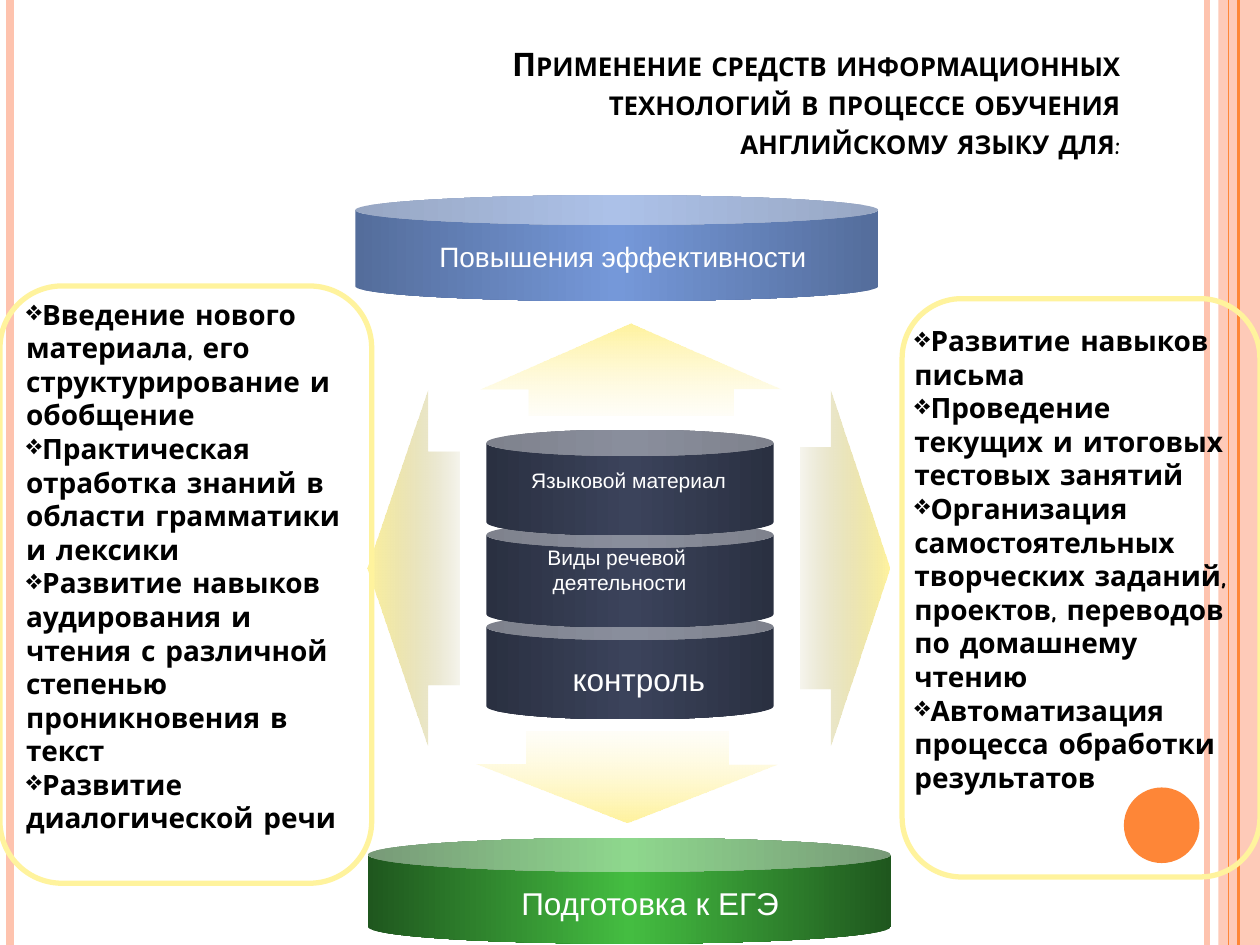
from lxml.etree import SubElement
from pptx import Presentation
from pptx.dml.color import RGBColor
from pptx.enum.shapes import MSO_CONNECTOR, MSO_SHAPE as SHAPE
from pptx.enum.text import MSO_ANCHOR, MSO_AUTO_SIZE, PP_ALIGN
from pptx.oxml.ns import qn
from pptx.util import Inches, Pt

THEME = {
    "orange": "FE8637", "peach": "FEC3AE", "yellow": "FFF39D",
    "cream": "FFF7C8", "olive": "B6AE70", "black": "000000", "white": "FFFFFF",
    "navy": ("2A3041", "3B435B"), "blue": ("546D9B", "7598D9"),
    "green": ("1F571E", "44BD41"),
    "heading_font": "Comic Neue", "label_font": "Arial",
    "title_size": 18.5, "list_size": 16, "small_label": 12,
    "medium_label": 16, "large_label": 18,
}


def color(name):
    return RGBColor.from_string(THEME[name])


def add_gradient_shape(kind, box, stops, angle=0, adjustments=()):
    """Add a borderless shape; stops are (position %, hex colour, opacity %)."""
    shape = slide.shapes.add_shape(kind, *map(Inches, box))
    shape.shadow.inherit = False
    shape.line.fill.background()
    for index, value in enumerate(adjustments):
        shape.adjustments[index] = value
    shape.fill.background()
    properties = shape._element.spPr
    no_fill = properties.find(qn("a:noFill"))
    gradient = SubElement(properties, qn("a:gradFill"), rotWithShape="1")
    properties.replace(no_fill, gradient)
    stop_list = SubElement(gradient, qn("a:gsLst"))
    for position, rgb, opacity in stops:
        stop = SubElement(stop_list, qn("a:gs"), pos=str(position * 1000))
        stop_color = SubElement(stop, qn("a:srgbClr"), val=rgb)
        if opacity < 100:
            SubElement(stop_color, qn("a:alpha"), val=str(opacity * 1000))
    SubElement(gradient, qn("a:lin"), ang=str(angle * 60000), scaled="0")


def add_text(box, lines, size, font, color_name, bold=False, bullet=None):
    """Add a text box: centred lines, or a left-aligned list with a bullet."""
    frame = slide.shapes.add_textbox(*map(Inches, box)).text_frame
    frame.word_wrap = True
    frame.text = "\n".join(lines)
    for paragraph in frame.paragraphs:
        paragraph.alignment = PP_ALIGN.LEFT if bullet else PP_ALIGN.CENTER
        paragraph.font.size = Pt(THEME[size])
        paragraph.font.name = THEME[font]
        paragraph.font.bold = bold
        paragraph.font.color.rgb = color(color_name)
        if bullet:
            properties = paragraph._p.get_or_add_pPr()
            mark = properties.makeelement(qn("a:buChar"), {"char": bullet})
            properties.find(qn("a:defRPr")).addprevious(mark)
        for run in paragraph.runs:
            run.font.size = Pt(THEME[size])
            run.font.name = THEME[font]
            run.font.bold = bold
            run.font.color.rgb = color(color_name)


prs = Presentation()
prs.slide_width, prs.slide_height = Inches(10), Inches(7.5)
slide = prs.slides.add_slide(prs.slide_layouts[5])

# Side stripes and the circle
band = slide.shapes.add_shape(
    SHAPE.RECTANGLE, Inches(9.67), 0, Inches(0.33), Inches(7.5))
circle = slide.shapes.add_shape(
    SHAPE.OVAL, Inches(8.92), Inches(6.25), Inches(0.6), Inches(0.6))
for decoration, color_name in ((band, "peach"), (circle, "orange")):
    decoration.shadow.inherit = False
    decoration.fill.solid()
    decoration.fill.fore_color.rgb = color(color_name)
    decoration.line.fill.background()
band_color = next(band._element.spPr.iter(qn("a:srgbClr")))
SubElement(band_color, qn("a:alpha"), val="87000")

for x, color_name, width in ((0.08, "peach", 4.5), (9.58, "peach", 3),
                             (9.75, "orange", 0.75), (9.83, "orange", 1.5)):
    stripe = slide.shapes.add_connector(
        MSO_CONNECTOR.STRAIGHT, Inches(x), 0, Inches(x), Inches(7.5))
    stripe.line.color.rgb = color(color_name)
    stripe.line.width = Pt(width)
    SubElement(stripe._element.spPr, qn("a:effectLst"))

# Title
title = slide.shapes.title
title.left, title.top = Inches(3.2), Inches(0.28)
title.width, title.height = Inches(5.79), Inches(1.05)
heading = title.text_frame
heading.text = ("Применение средств информационных технологий "
                "в процессе обучения английскому языку для:")
heading.word_wrap = True
heading.auto_size = MSO_AUTO_SIZE.NONE
heading.vertical_anchor = MSO_ANCHOR.BOTTOM
heading.paragraphs[0].alignment = PP_ALIGN.RIGHT
heading_run = heading.paragraphs[0].runs[0]
heading_run.font.size = Pt(THEME["title_size"])
heading_run.font.name = THEME["heading_font"]
heading_run.font.bold = True
heading_run.font.color.rgb = color("black")
heading_run._r.get_or_add_rPr().set("cap", "small")

# Cylinders: the central stack from bottom to top, then the two wide ones
cylinders = [((3.86, 4.87 - 0.73 * level, 2.28, 0.84), "navy", 0.25)
             for level in range(3)]
cylinders += [((2.82, 1.55, 4.15, 0.84), "blue", 0.28),
              ((2.92, 6.65, 4.15, 0.84), "green", 0.32)]
for box, palette, rim in cylinders:
    edge, middle = THEME[palette]
    add_gradient_shape(
        SHAPE.CAN, box,
        [(0, edge, 100), (50, middle, 100), (100, edge, 100)],
        adjustments=[rim])

# Arrows fade from the tip to the tail
arrows = [
    (SHAPE.LEFT_ARROW, (2.92, 3.1, 0.73, 2.82), "olive", 0, True, (0.66, 0.65)),
    (SHAPE.RIGHT_ARROW, (6.35, 3.1, 0.71, 2.82), "olive", 0, False, (0.68, 0.66)),
    (SHAPE.UP_ARROW, (3.81, 2.57, 2.39, 0.73), "cream", 90, True, (0.68, 0.71)),
    (SHAPE.DOWN_ARROW, (3.78, 5.81, 2.39, 0.72), "cream", 90, False, (0.67, 0.64)),
]
for kind, box, tail, angle, tip_first, adjustments in arrows:
    ends = [(THEME["yellow"], 100), (THEME[tail], 12)]
    if not tip_first:
        ends.reverse()
    add_gradient_shape(kind, box, [(0, *ends[0]), (100, *ends[1])],
                       angle, adjustments)

# Cylinder labels
labels = [
    ((3.05, 3.66, 3.88, 0.4), ["Языковой материал"], "small_label"),
    ((2.21, 4.27, 5.37, 0.67), ["Виды речевой", " деятельности"], "small_label"),
    ((3.89, 5.19, 2.36, 0.53), ["контроль"], "large_label"),
    ((0.63, 1.85, 8.63, 0.49), ["Повышения эффективности"], "medium_label"),
    ((2.74, 6.97, 4.84, 0.53), ["Подготовка к ЕГЭ"], "large_label"),
]
for box, lines, size in labels:
    add_text(box, lines, size, "label_font", "white")

# Outlined side panels with their lists
panels = [
    ((0, 2.27, 2.95, 4.74), (0.11, 2.31, 2.74, 3.87), [
        "Введение нового материала, его структурирование и обобщение",
        "Практическая отработка знаний в области грамматики и лексики",
        "Развитие навыков аудирования и чтения с различной степенью "
        "проникновения в текст",
        "Развитие диалогической речи",
    ]),
    ((7.16, 2.37, 2.84, 4.59), (7.16, 2.52, 2.84, 3.6), [
        "Развитие навыков письма",
        "Проведение текущих и итоговых тестовых занятий",
        "Организация самостоятельных творческих заданий, проектов, "
        "переводов по домашнему чтению",
        "Автоматизация процесса обработки результатов",
    ]),
]
for frame_box, list_box, items in panels:
    panel = slide.shapes.add_shape(
        SHAPE.ROUNDED_RECTANGLE, *map(Inches, frame_box))
    panel.shadow.inherit = False
    panel.fill.background()
    panel.line.color.rgb = color("yellow")
    panel.line.width = Pt(3)
    add_text(list_box, items, "list_size", "heading_font", "black",
             bold=True, bullet="❖")

prs.save("out.pptx")
